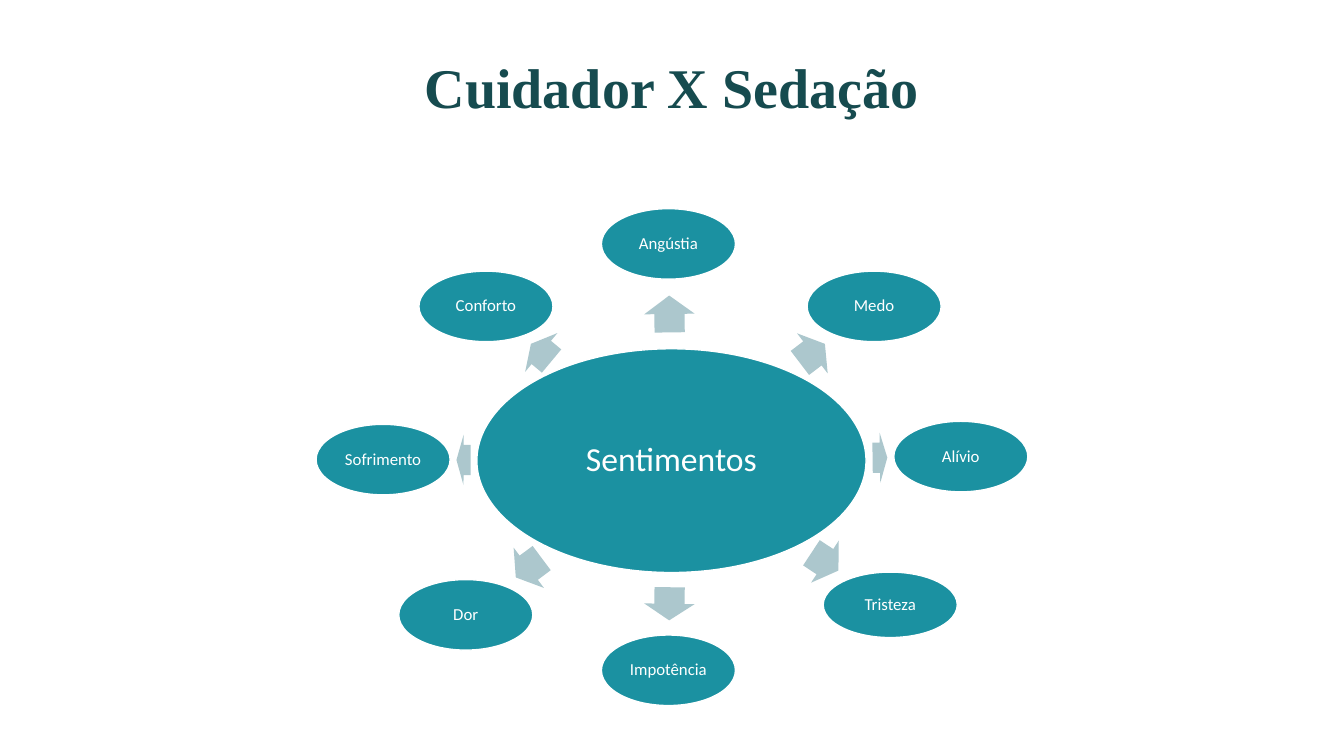
from math import atan2, cos, degrees, hypot, sin

from pptx import Presentation
from pptx.dml.color import RGBColor
from pptx.enum import shapes, text
from pptx.util import Inches, Pt

TITLE = "Cuidador X Sedação"
HUB = ("Sentimentos", 6.66, 4.57, 3.86, 2.22)
# Feeling, centre x, centre y, width, height
FEELINGS = [
    ("Angústia", 6.63, 2.42, 1.33, 0.7),
    ("Medo", 8.67, 3.04, 1.33, 0.7),
    ("Alívio", 9.53, 4.53, 1.33, 0.7),
    ("Tristeza", 8.83, 6.0, 1.33, 0.65),
    ("Impotência", 6.63, 6.65, 1.33, 0.7),
    ("Dor", 4.62, 6.1, 1.33, 0.7),
    ("Sofrimento", 3.8, 4.56, 1.33, 0.7),
    ("Conforto", 4.82, 3.04, 1.33, 0.7),
]

TEAL = RGBColor(0x1B, 0x91, 0xA1)
DARK_TEAL = RGBColor(0x16, 0x4B, 0x4F)
PALE_TEAL = RGBColor(0xAC, 0xC7, 0xCD)
WHITE = RGBColor(0xFF, 0xFF, 0xFF)

ARROW_SHARE = 0.53  # part of the gap between two ellipses that an arrow fills
ARROW_WIDTH = 0.5

prs = Presentation()
prs.slide_width, prs.slide_height = Inches(13.33), Inches(7.5)
slide = prs.slides.add_slide(prs.slide_layouts[6])


def write(frame, words, font_name, size, color, bold=False):
    frame.word_wrap = True
    paragraph = frame.paragraphs[0]
    paragraph.text = words
    paragraph.alignment = text.PP_ALIGN.CENTER
    paragraph.line_spacing = 0.9
    font = paragraph.font
    font.name, font.size, font.bold = font_name, Pt(size), bold
    font.color.rgb = color


def add_centred(kind, x, y, width, height, color):
    shape = slide.shapes.add_shape(
        kind, Inches(x - width / 2), Inches(y - height / 2), Inches(width), Inches(height))
    shape.shadow.inherit = False
    shape.fill.solid()
    shape.fill.fore_color.rgb = color
    return shape


def add_feeling(label, x, y, width, height, size, inset):
    ellipse = add_centred(shapes.MSO_SHAPE.OVAL, x, y, width, height, TEAL)
    ellipse.line.color.rgb = WHITE
    ellipse.line.width = Pt(1)
    frame = ellipse.text_frame
    frame.margin_left = frame.margin_right = Inches(inset)
    frame.margin_top = frame.margin_bottom = Inches(inset)
    frame.vertical_anchor = text.MSO_ANCHOR.MIDDLE
    write(frame, label, "Calibri", size, WHITE)


def radius(width, height, angle):
    """Distance from an ellipse's centre to its edge in the given direction."""
    return 1 / hypot(2 * cos(angle) / width, 2 * sin(angle) / height)


def add_arrow(start, end):
    """Centre an outward arrow in the gap between two ellipses."""
    _, x1, y1, w1, h1 = start
    _, x2, y2, w2, h2 = end
    angle = atan2(y2 - y1, x2 - x1)
    inner = radius(w1, h1, angle)
    gap = hypot(x2 - x1, y2 - y1) - inner - radius(w2, h2, angle)
    middle = inner + gap / 2
    arrow = add_centred(
        shapes.MSO_SHAPE.RIGHT_ARROW, x1 + middle * cos(angle), y1 + middle * sin(angle),
        gap * ARROW_SHARE, ARROW_WIDTH, PALE_TEAL)
    arrow.line.fill.background()
    arrow.adjustments[0], arrow.adjustments[1] = 0.6, 0.5
    arrow.rotation = degrees(angle) % 360


title = slide.shapes.add_textbox(Inches(1.41), Inches(0.36), Inches(10.5), Inches(0.89))
title.text_frame.vertical_anchor = text.MSO_ANCHOR.BOTTOM
write(title.text_frame, TITLE, "Times New Roman", 40, DARK_TEAL, bold=True)

add_feeling(*HUB, size=24, inset=0.03)
for feeling in FEELINGS:
    add_arrow(HUB, feeling)
    add_feeling(*feeling, size=12, inset=0.02)

prs.save("out.pptx")
